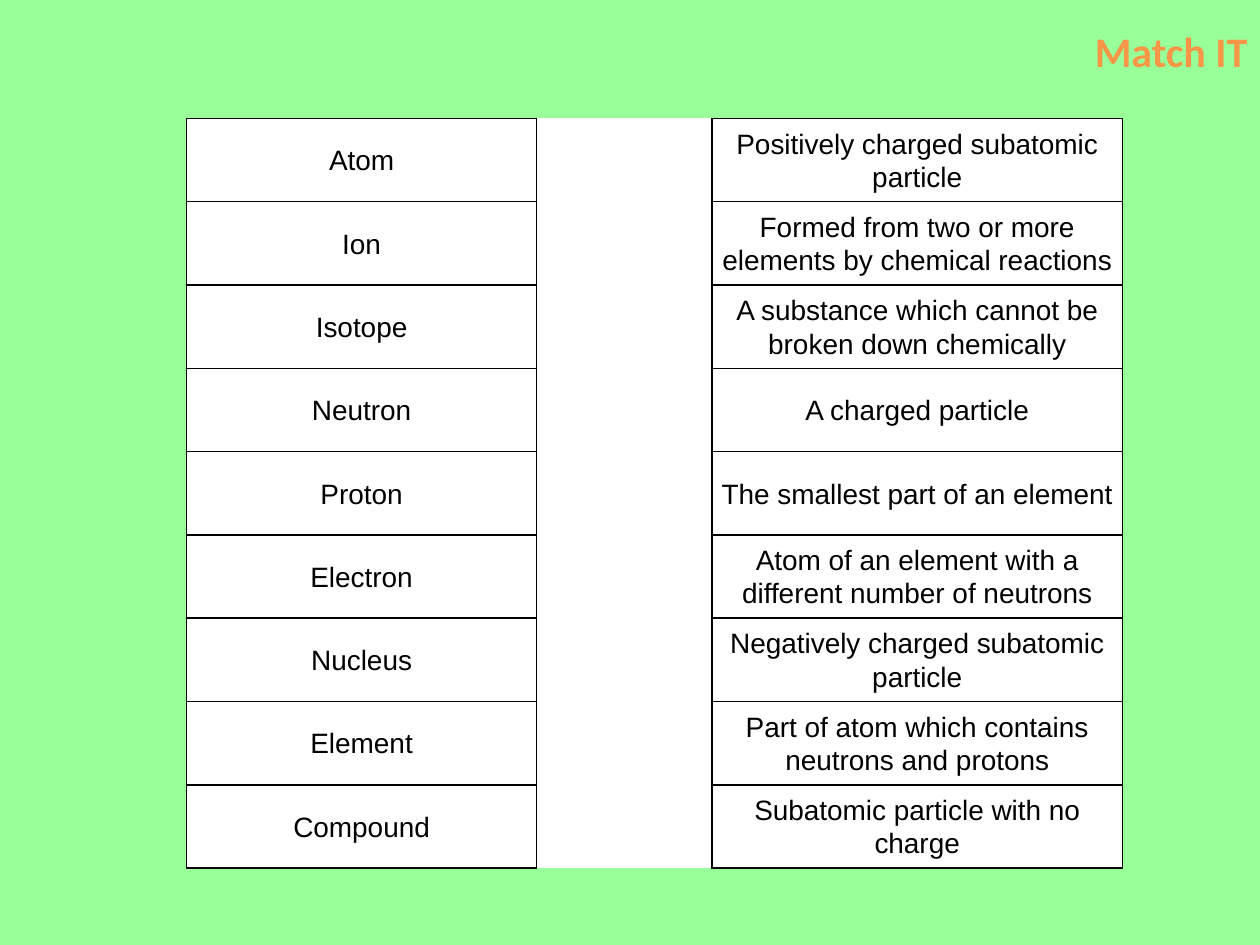
from typing import NamedTuple

from lxml import etree
from pptx import Presentation
from pptx import util as u
from pptx.dml.color import RGBColor
from pptx.enum import text
from pptx.oxml.ns import qn


class Pair(NamedTuple):
    term: str
    meaning: str


PAIRS = [
    Pair("Atom", "Positively charged subatomic particle"),
    Pair("Ion", "Formed from two or more elements by chemical reactions"),
    Pair("Isotope", "A substance which cannot be broken down chemically"),
    Pair("Neutron", "A charged particle"),
    Pair("Proton", "The smallest part of an element"),
    Pair("Electron", "Atom of an element with a different number of neutrons"),
    Pair("Nucleus", "Negatively charged subatomic particle"),
    Pair("Element", "Part of atom which contains neutrons and protons"),
    Pair("Compound", "Subatomic particle with no charge"),
]
COLUMN_WIDTHS = (2.78, 1.39, 3.26)
TABLE_HEIGHT = 5.95
TERM, GAP, MEANING = range(3)


def paint(color_format, color: str) -> None:
    color_format.rgb = RGBColor.from_string(color)


def fill_solid(fill, color: str) -> None:
    fill.solid()
    paint(fill.fore_color, color)


def style_cell(cell, sides: str) -> None:
    """Rule the given sides in black and fill the cell white."""
    properties = cell._tc.get_or_add_tcPr()
    for side in "LRTB":
        line = etree.SubElement(properties, qn(f"a:ln{side}"), w=str(u.Pt(1)))
        if side in sides:
            solid = etree.SubElement(line, qn("a:solidFill"))
            etree.SubElement(solid, qn("a:srgbClr"), val="000000")
        else:
            etree.SubElement(line, qn("a:noFill"))
    fill_solid(cell.fill, "FFFFFF")


def write_cell(cell, words: str) -> None:
    cell.text_frame.text = words
    cell.vertical_anchor = text.MSO_ANCHOR.MIDDLE
    cell.margin_left = cell.margin_right = u.Inches(0.07)
    cell.margin_top = cell.margin_bottom = 0
    para = cell.text_frame.paragraphs[0]
    para.alignment = text.PP_ALIGN.CENTER
    para.line_spacing = 1.07
    font = para.runs[0].font
    font.name, font.size = "Arial", u.Pt(16)
    paint(font.color, "000000")


def add_match_table(page) -> None:
    table = page.shapes.add_table(
        len(PAIRS), len(COLUMN_WIDTHS), u.Inches(1.48), u.Inches(0.94),
        u.Inches(sum(COLUMN_WIDTHS)), u.Inches(TABLE_HEIGHT)).table
    table.first_row = table.horz_banding = False
    for column, width in zip(table.columns, COLUMN_WIDTHS):
        column.width = u.Inches(width)
    for index, pair in enumerate(PAIRS):
        table.rows[index].height = u.Inches(TABLE_HEIGHT / len(PAIRS))
        style_cell(table.cell(index, GAP), "LR")
        for column, words in ((TERM, pair.term), (MEANING, pair.meaning)):
            cell = table.cell(index, column)
            style_cell(cell, "LRTB")
            write_cell(cell, words)
    # One open space between the columns for drawing matching lines
    table.cell(0, GAP).merge(table.cell(len(PAIRS) - 1, GAP))


def add_title(page) -> None:
    title = page.shapes.title
    title.left, title.top = u.Inches(1.77), u.Inches(0.04)
    title.width, title.height = u.Inches(8.23), u.Inches(0.72)
    frame = title.text_frame
    frame.text = "Match IT"
    frame.vertical_anchor = text.MSO_ANCHOR.MIDDLE
    para = frame.paragraphs[0]
    para.alignment = text.PP_ALIGN.RIGHT
    font = para.runs[0].font
    font.name, font.size, font.bold = "Calibri", u.Pt(24), True
    paint(font.color, "F79646")


def main() -> None:
    deck = Presentation()
    deck.slide_width, deck.slide_height = u.Inches(10), u.Inches(7.5)
    page = deck.slides.add_slide(deck.slide_layouts.get_by_name("Title Only"))
    fill_solid(page.background.fill, "99FF99")
    add_match_table(page)
    add_title(page)
    deck.save("out.pptx")


if __name__ == "__main__":
    main()
